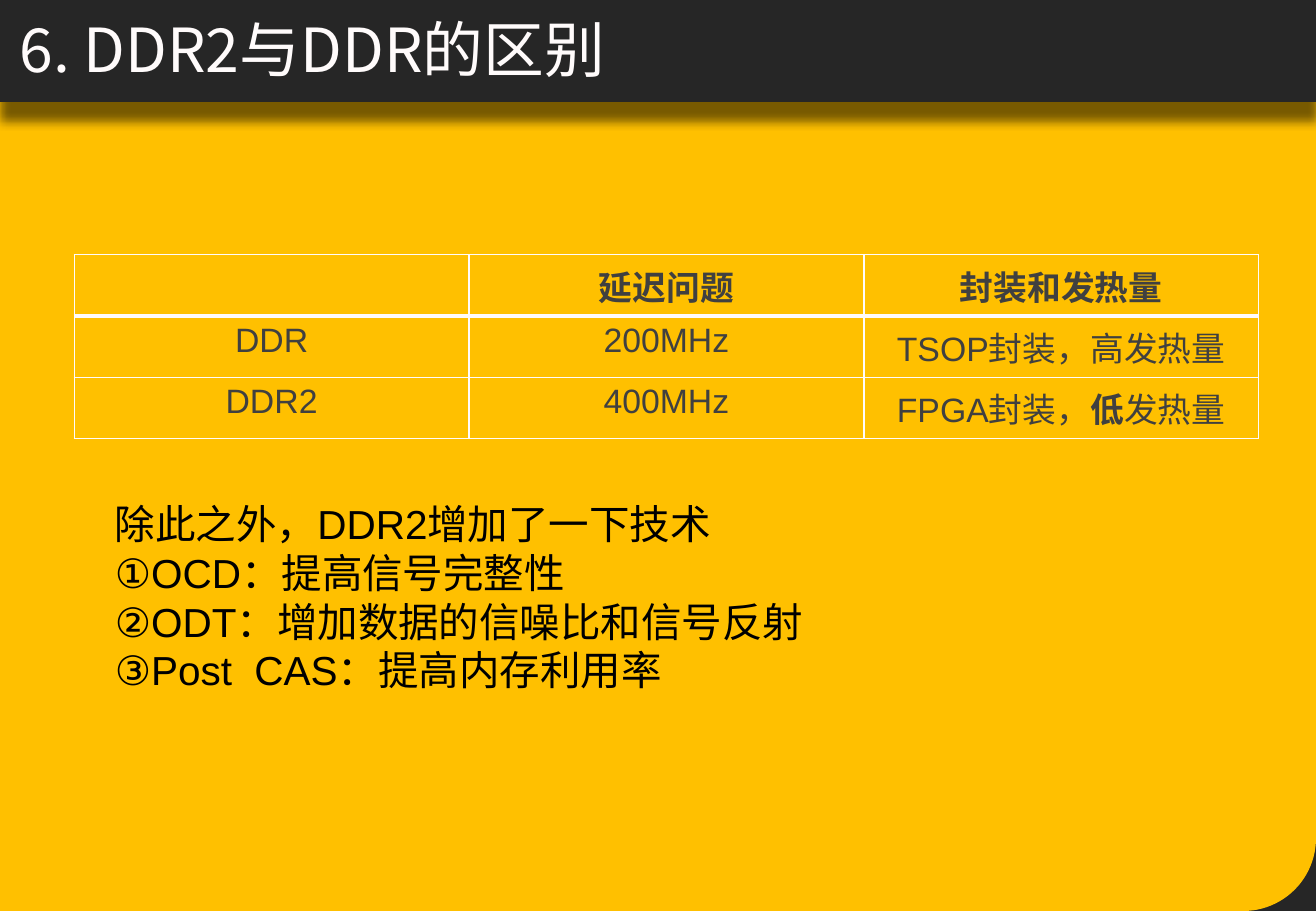
from lxml.etree import SubElement
from pptx import Presentation
from pptx.dml.color import RGBColor
from pptx.enum.shapes import MSO_SHAPE
from pptx.enum.text import MSO_ANCHOR, MSO_AUTO_SIZE, PP_ALIGN
from pptx.oxml import parse_xml
from pptx.oxml.ns import nsdecls, qn
from pptx.util import Pt

WIDE, HIGH, BAR = 780, 540, 60.5
DARK, GOLD, PALE, GREY, BLACK = "262626", "FFC000", "FFFBFB", "404040", "000000"
SANS, HAN = "Arial", "Noto Sans CJK SC"

ROWS = [
    ["", "延迟问题", "封装和发热量"],
    ["DDR", "200MHz", "TSOP封装，高发热量"],
    ["DDR2", "400MHz", "FPGA封装，*低*发热量"],
]
NOTES = [
    "除此之外，DDR2增加了一下技术",
    "①OCD：提高信号完整性",
    "②ODT：增加数据的信噪比和信号反射",
    "③Post  CAS：提高内存利用率",
]


def paint(fill, color):
    fill.solid()
    fill.fore_color.rgb = RGBColor.from_string(color)


def write(para, text, size, color, face=SANS, bold=False):
    """Add one run per piece of text; pieces between asterisks are bold."""
    for i, piece in enumerate(text.split("*")):
        run = para.add_run()
        run.text = piece
        font = run.font
        font.name, font.size, font.bold = face, Pt(size), bold or i % 2 == 1
        paint(font.fill, color)
        SubElement(run._r.get_or_add_rPr(), qn("a:ea"), typeface=HAN)


def block(slide, kind, box, color):
    shape = slide.shapes.add_shape(kind, *map(Pt, box))
    shape.shadow.inherit = False
    paint(shape.fill, color)
    shape.line.fill.background()
    return shape


def shade(shape):
    """Cast a soft shadow straight down."""
    effects = shape._element.spPr.find(qn("a:effectLst"))
    effects.append(parse_xml(
        f'<a:outerShdw {nsdecls("a")} blurRad="{Pt(6)}" dist="{Pt(11)}" '
        'dir="5400000" algn="t" rotWithShape="0">'
        '<a:srgbClr val="000000"><a:alpha val="52000"/></a:srgbClr>'
        '</a:outerShdw>'))


def backdrop(slide):
    body = (0, BAR, WIDE, HIGH - BAR)
    block(slide, MSO_SHAPE.RECTANGLE, body, DARK)
    page = block(slide, MSO_SHAPE.ROUND_1_RECTANGLE, body, GOLD)
    page.adjustments[0] = 0.09
    page.rotation = 180
    page._element.spPr.xfrm.set("flipH", "1")
    shade(block(slide, MSO_SHAPE.RECTANGLE, (0, 0, WIDE, BAR), DARK))


def heading(slide, box, text):
    title = slide.shapes.title
    slide.shapes._spTree.append(title._element)
    title.left, title.top, title.width, title.height = map(Pt, box)
    frame = title.text_frame
    frame.vertical_anchor = MSO_ANCHOR.MIDDLE
    para = frame.paragraphs[0]
    para.alignment = PP_ALIGN.LEFT
    write(para, text, 36, PALE, HAN)


def border(cell, widths):
    props = cell._tc.get_or_add_tcPr()
    for i, (side, width) in enumerate(zip("LRTB", widths)):
        props.insert(i, parse_xml(
            f'<a:ln{side} {nsdecls("a")} w="{Pt(width)}"><a:solidFill>'
            f'<a:srgbClr val="{PALE}"/></a:solidFill></a:ln{side}>'))


def grid(slide, box, rows):
    count = len(rows)
    table = slide.shapes.add_table(count, len(rows[0]), *map(Pt, box)).table
    table.horz_banding = False
    for r, texts in enumerate(rows):
        table.rows[r].height = Pt(box[3] / count)
        for c, text in enumerate(texts):
            cell = table.cell(r, c)
            cell.margin_left = cell.margin_right = Pt(8)
            paint(cell.fill, GOLD)
            border(cell, (1, 1, 3 if r == 1 else 1, 3 if r == 0 else 1))
            para = cell.text_frame.paragraphs[0]
            para.alignment = PP_ALIGN.CENTER
            if text:
                write(para, text, 20, GREY, bold=r == 0)


def notes(slide, box, lines):
    frame = slide.shapes.add_textbox(*map(Pt, box)).text_frame
    frame.word_wrap = False
    frame.auto_size = MSO_AUTO_SIZE.SHAPE_TO_FIT_TEXT
    for i, line in enumerate(lines):
        para = frame.add_paragraph() if i else frame.paragraphs[0]
        write(para, line, 24, BLACK)


def main():
    deck = Presentation()
    deck.slide_width, deck.slide_height = Pt(WIDE), Pt(HIGH)
    slide = deck.slides.add_slide(deck.slide_layouts[5])
    paint(slide.background.fill, PALE)
    backdrop(slide)
    heading(slide, (4.5, -8, 702, 73), "6. DDR2与DDR的区别")
    grid(slide, (44, 151, 702, 109), ROWS)
    notes(slide, (61, 292.5, 429, 124), NOTES)
    deck.save("out.pptx")


if __name__ == "__main__":
    main()
